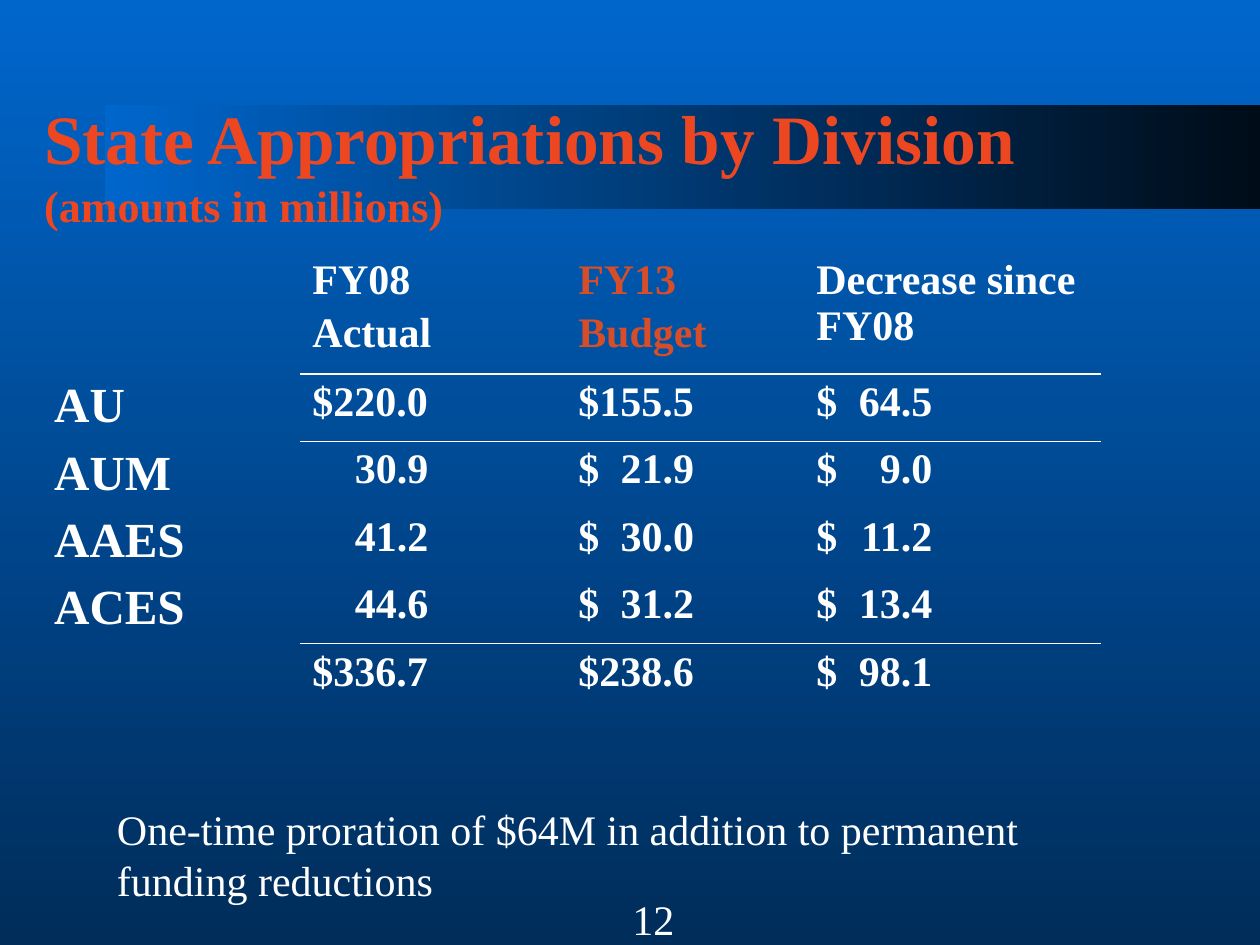
from pptx import Presentation
from pptx.dml.color import RGBColor
from pptx.enum.shapes import MSO_SHAPE as Shape
from pptx.enum.text import MSO_ANCHOR as Anchor, PP_ALIGN as Align
from pptx.oxml import parse_xml
from pptx.oxml.ns import nsdecls
from pptx.util import Inches, Pt

WHITE, ORANGE, RUST = "FFFFFF", "ED4722", "D54E29"
BLUE, NAVY, BLACK = "0066CC", "002D5A", "000C18"
NO_STYLE = "{2D5ABB26-0587-4C30-8999-92F81FD0307C}"

COLUMNS = [2.05, 2.11, 1.89, 2.36]
ROWS = [0.97] + [0.535] * 4 + [0.47]
RULED = {0: "B", 1: "T", 4: "B", 5: "T"}
NUMBER_EDGE = 0.92
DATA = [
    ["", "FY08\nActual", "FY13\nBudget", "Decrease since FY08"],
    ["AU", "$220.0", "$155.5", "$\t64.5"],
    ["AUM", "\t30.9", "$\t21.9", "$\t9.0"],
    ["AAES", "\t41.2", "$\t30.0", "$\t11.2"],
    ["ACES", "\t44.6", "$\t31.2", "$\t13.4"],
    ["", "$336.7", "$238.6", "$\t98.1"],
]


def rgb(value):
    return RGBColor.from_string(value)


def box(*lengths):
    return [Inches(v) for v in lengths]


def apply(target, values):
    for name, value in values.items():
        setattr(target, name, value)


class Deck:
    font = "Times New Roman"

    def __init__(self, width, height):
        self.prs = Presentation()
        apply(self.prs, {"slide_width": Inches(width), "slide_height": Inches(height)})
        self.s = self.prs.slides.add_slide(self.prs.slide_layouts[5])

    def style(self, font, size, color=WHITE, bold=False):
        apply(font, {"name": self.font, "size": Pt(size), "bold": bold})
        font.color.rgb = rgb(color)

    def gradient(self, fill, angle, colors):
        fill.gradient()
        fill.gradient_angle = angle
        for stop, color in zip(fill.gradient_stops, colors):
            stop.color.rgb = rgb(color)

    def background(self, *colors):
        self.gradient(self.s.background.fill, 270, colors)

    def band(self, at, *colors):
        sp = self.s.shapes.add_shape(Shape.RECTANGLE, *box(*at))
        sp.shadow.inherit = False
        sp.line.fill.background()
        self.gradient(sp.fill, 0, colors)
        self.s.shapes._spTree.insert(2, sp._element)

    def title(self, at, heading, subheading):
        sp = self.s.shapes.title
        apply(sp, dict(zip(("left", "top", "width", "height"), box(*at))))
        tf = sp.text_frame
        apply(tf, {"word_wrap": True, "vertical_anchor": Anchor.MIDDLE})
        p = tf.paragraphs[0]
        p.alignment = Align.LEFT
        for text, size in ((heading, 39.6), (subheading, 25.2)):
            if p.runs:
                p.add_line_break()
            r = p.add_run()
            r.text = text
            self.style(r.font, size, ORANGE, True)

    def text(self, at, text):
        tf = self.s.shapes.add_textbox(*box(*at)).text_frame
        tf.word_wrap = True
        r = tf.paragraphs[0].add_run()
        r.text = text
        self.style(r.font, 24)

    def rule(self, cell, side):
        cell._tc.get_or_add_tcPr().insert(0, parse_xml(
            f'<a:ln{side} {nsdecls("a")} w="12700"><a:solidFill>'
            f'<a:srgbClr val="{WHITE}"/></a:solidFill></a:ln{side}>'))

    def cell(self, cell, text, size, color):
        cell.fill.background()
        apply(cell, {"margin_top": Inches(0.04), "margin_bottom": Inches(0.04)})
        tf = cell.text_frame
        for i, line in enumerate(text.split("\n")):
            p = tf.add_paragraph() if i else tf.paragraphs[0]
            if i:
                p.space_before = Pt(4)
            if "\t" in line:
                p._p.get_or_add_pPr().append(parse_xml(
                    f'<a:tabLst {nsdecls("a")}><a:tab pos="{Inches(NUMBER_EDGE)}" algn="r"/></a:tabLst>'))
            if line:
                r = p.add_run()
                r.text = line
                self.style(r.font, size, color, True)

    def table(self, left, top):
        at = box(left, top, sum(COLUMNS), sum(ROWS))
        table = self.s.shapes.add_table(len(ROWS), len(COLUMNS), *at).table
        apply(table, {"first_row": False, "horz_banding": False})
        table._tbl.tblPr[0].text = NO_STYLE
        for column, width in zip(table.columns, COLUMNS):
            column.width = Inches(width)
        for i, (height, values) in enumerate(zip(ROWS, DATA)):
            table.rows[i].height = Inches(height)
            for j, text in enumerate(values):
                color = RUST if (i, j) == (0, 2) else WHITE
                self.cell(table.cell(i, j), text, 24 if j else 28, color)
                if j and i in RULED:
                    self.rule(table.cell(i, j), RULED[i])


def main():
    deck = Deck(10, 7.5)
    deck.background(BLUE, NAVY)
    deck.band((0.83, 0.83, 9.17, 0.83), BLUE, BLACK)
    deck.title((0.25, 0.67, 9, 1.25), "State Appropriations by Division", "(amounts in millions)")
    deck.table(0.33, 2)
    deck.text((0.83, 6.33, 7.67, 0.71),
              "One-time proration of $64M in addition to permanent funding reductions")
    deck.text((4.92, 7.04, 0.83, 0.5), "12")
    deck.prs.save("out.pptx")


if __name__ == "__main__":
    main()
